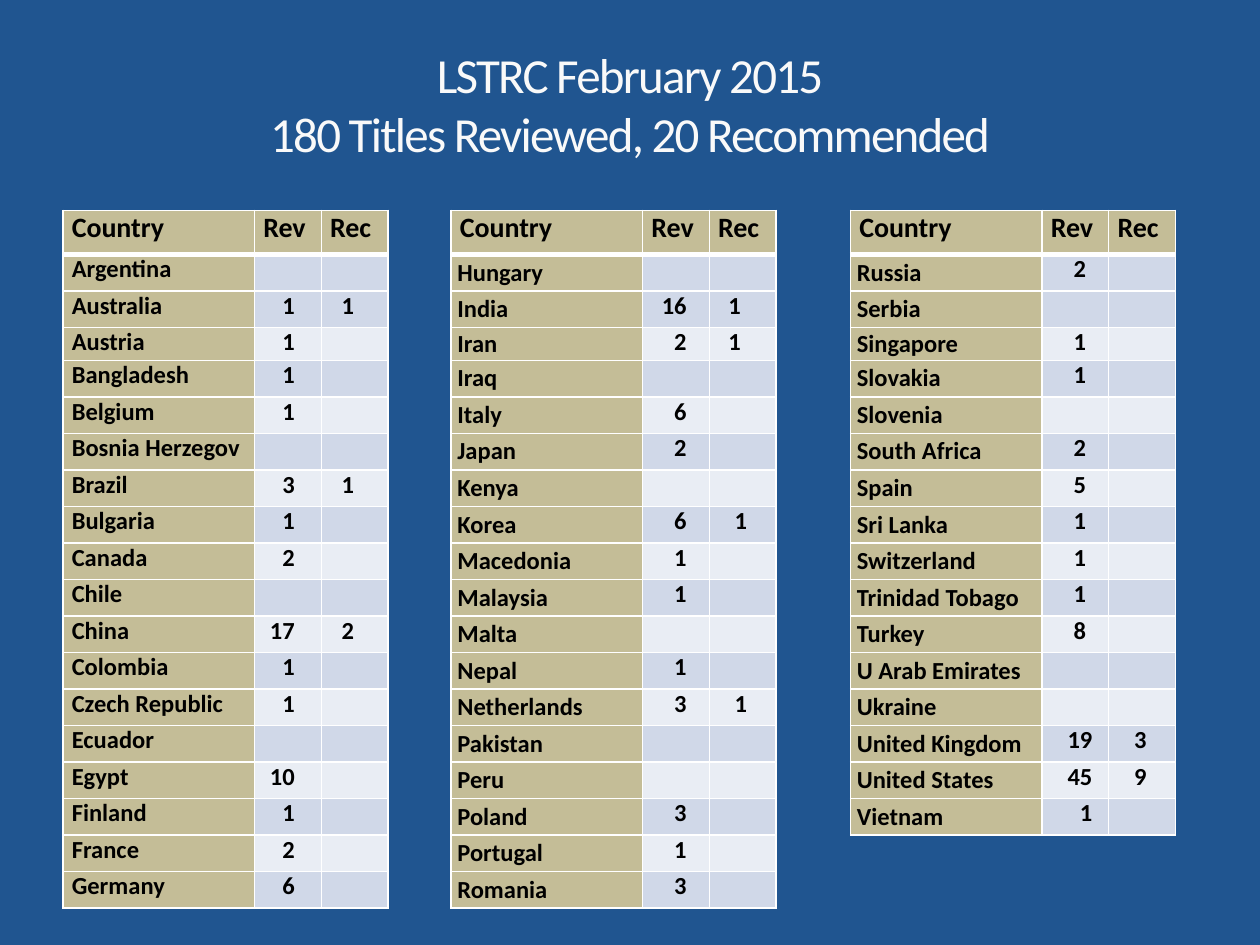
from lxml import etree
from pptx import Presentation
from pptx.dml.color import RGBColor
from pptx.enum.text import MSO_ANCHOR, PP_ALIGN
from pptx.oxml.ns import qn
from pptx.util import Inches, Pt

BLUE = RGBColor(0x20, 0x55, 0x90)
PALE = RGBColor(0xF9, 0xF9, 0xF9)
TAN = RGBColor(0xC4, 0xBD, 0x97)
DARK = RGBColor(0xD0, 0xD8, 0xE8)
LIGHT = RGBColor(0xE9, 0xED, 0xF4)
BLACK = RGBColor(0, 0, 0)
TOP, MID, BOTTOM = MSO_ANCHOR.TOP, MSO_ANCHOR.MIDDLE, MSO_ANCHOR.BOTTOM
LEFT, CENTER, RIGHT = PP_ALIGN.LEFT, PP_ALIGN.CENTER, PP_ALIGN.RIGHT

WIDE, HIGH = 10, 7.5
COLS = (1.52, 0.53, 0.53)
HEAD, ROW, TIGHT = 0.35, 0.29, 0.26
TIGHT_AT = 3
INSET = 0.07
TITLE = ("LSTRC February 2015", "180 Titles Reviewed, 20 Recommended")
HEADS = ("Country", "Rev", "Rec")

FIRST = [
    ("Argentina",), ("Australia", 1, 1), ("Austria", 1), ("Bangladesh", 1),
    ("Belgium", 1), ("Bosnia Herzegov",), ("Brazil", 3, 1), ("Bulgaria", 1),
    ("Canada", 2), ("Chile",), ("China", 17, 2), ("Colombia", 1),
    ("Czech Republic", 1), ("Ecuador",), ("Egypt", 10), ("Finland", 1),
    ("France", 2), ("Germany", 6),
]
SECOND = [
    ("Hungary",), ("India", 16, 1), ("Iran", 2, 1), ("Iraq",), ("Italy", 6),
    ("Japan", 2), ("Kenya",), ("Korea", 6, 1), ("Macedonia", 1),
    ("Malaysia", 1), ("Malta",), ("Nepal", 1), ("Netherlands", 3, 1),
    ("Pakistan",), ("Peru",), ("Poland", 3), ("Portugal", 1), ("Romania", 3),
]
THIRD = [
    ("Russia", 2), ("Serbia",), ("Singapore", 1), ("Slovakia", 1),
    ("Slovenia",), ("South Africa", 2), ("Spain", 5), ("Sri Lanka", 1),
    ("Switzerland", 1), ("Trinidad Tobago", 1), ("Turkey", 8),
    ("U Arab Emirates",), ("Ukraine",), ("United Kingdom", 19, 3),
    ("United States", 45, 9), ("Vietnam", 1),
]
# Left edge, rows, name inset and anchor, right insets of Rev and Rec by first row
PANELS = [
    (0.5, FIRST, 0.07, TOP, {1: (0.21, 0.27)}),
    (3.58, SECOND, 0.05, MID, {1: (0.18, 0.28), 8: (0.18, 0.23)}),
    (6.75, THIRD, 0.05, MID, {1: (0.18, 0.23), 14: (0.13, 0.23)}),
]


def apply(item, **values):
    for name, value in values.items():
        setattr(item, name, value)


def edge(cell, **widths):
    """Draw white borders; the keys are the sides L, R, T and B."""
    props = cell._tc.get_or_add_tcPr()
    for side, width in widths.items():
        line = etree.SubElement(props, qn(f"a:ln{side}"), w=str(Pt(width)))
        fill = etree.SubElement(line, qn("a:solidFill"))
        etree.SubElement(fill, qn("a:srgbClr"), val="FFFFFF")


def fill_cell(cell, text, size, color, align=LEFT, anchor=TOP,
              left=INSET, right=INSET):
    apply(cell, margin_left=Inches(left), margin_right=Inches(right),
          margin_top=0, margin_bottom=0, vertical_anchor=anchor)
    cell.fill.solid()
    cell.fill.fore_color.rgb = color
    para = cell.text_frame.paragraphs[0]
    para.alignment = align
    if text:
        run = para.add_run()
        run.text = text
        apply(run.font, name="Calibri", size=Pt(size), bold=True)
        run.font.color.rgb = BLACK
    else:
        etree.SubElement(para._p, qn("a:endParaRPr"), sz=str(size * 100))


def add_title(slide, left, top, width, height):
    box = slide.shapes.add_textbox(*map(Inches, (left, top, width, height)))
    frame = box.text_frame
    apply(frame, word_wrap=True, vertical_anchor=BOTTOM)
    para = frame.paragraphs[0]
    para.alignment = CENTER
    for num, text in enumerate(TITLE):
        if num:
            para.add_line_break()
        run = para.add_run()
        run.text = text
        apply(run.font, name="Calibri", size=Pt(28))
        run.font.color.rgb = PALE
        run.font._element.set("spc", "-100")


def add_panel(slide, left, top, data, inset, anchor, pads):
    highs = [HEAD] + [ROW] * len(data)
    highs[TIGHT_AT] = TIGHT
    box = map(Inches, (left, top, sum(COLS), sum(highs)))
    table = slide.shapes.add_table(len(highs), len(COLS), *box).table
    for col, width in zip(table.columns, COLS):
        col.width = Inches(width)
    for row, height in zip(table.rows, highs):
        row.height = Inches(height)

    for num, items in enumerate([HEADS] + data):
        band = LIGHT if num % 2 and num > 1 else DARK
        pad = pads[max(key for key in pads if key <= max(num, 1))]
        for col in range(len(COLS)):
            cell = table.cell(num, col)
            text = str(items[col]) if col < len(items) else ""
            edge(cell, L=1, R=1, T=3 if num == 1 else 1, B=1 if num else 3)
            if num == 0:
                fill_cell(cell, text, 16, TAN)
            elif col == 0:
                fill_cell(cell, text, 14, TAN, anchor=anchor, left=inset)
            else:
                fill_cell(cell, text, 14, band, align=RIGHT, right=pad[col - 1])


def main():
    deck = Presentation()
    apply(deck, slide_width=Inches(WIDE), slide_height=Inches(HIGH))
    slide = deck.slides.add_slide(deck.slide_layouts[6])
    back = slide.background.fill
    back.solid()
    back.fore_color.rgb = BLUE
    add_title(slide, 0.05 * WIDE, 0.17, 0.9 * WIDE, 1.17)
    for left, *rest in PANELS:
        add_panel(slide, left, 1.67, *rest)
    deck.save("out.pptx")


if __name__ == "__main__":
    main()
